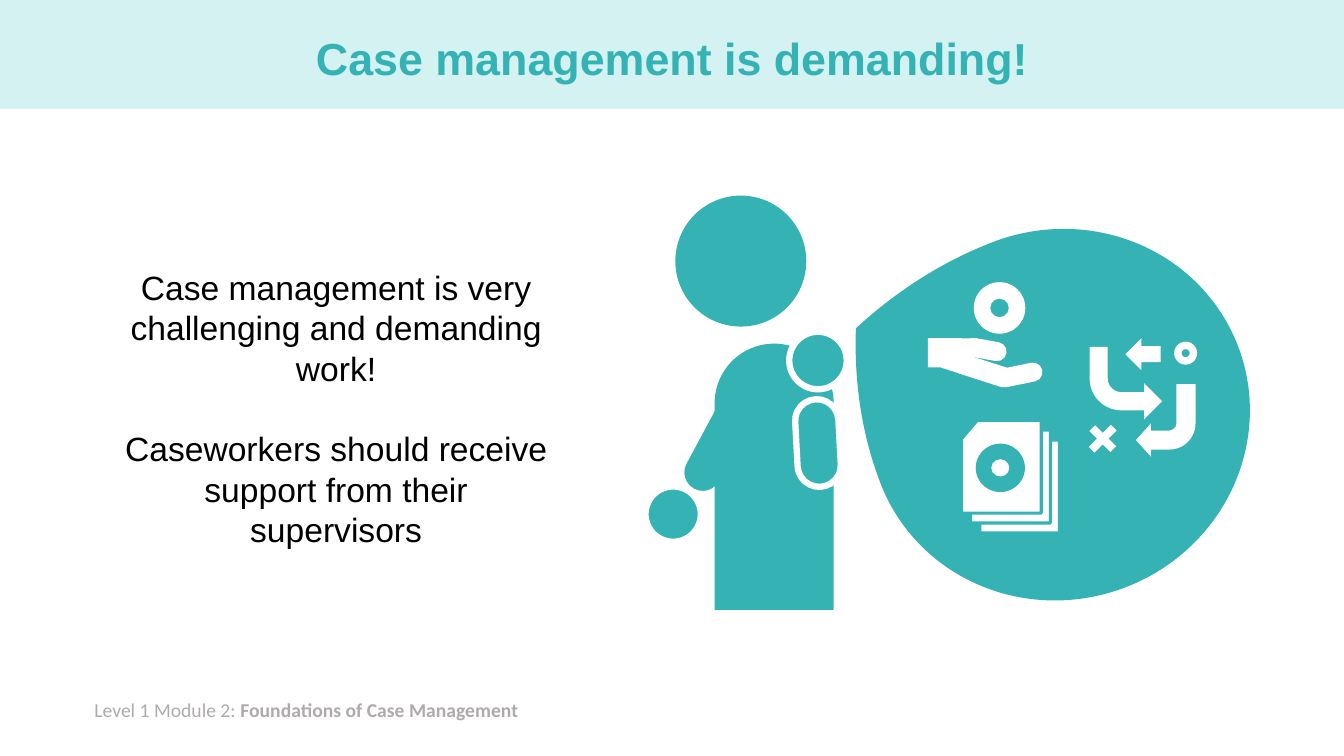
from pptx import Presentation
from pptx.dml.color import RGBColor
from pptx.enum.shapes import MSO_SHAPE as S
from pptx.enum.text import MSO_ANCHOR as Anchor, PP_ALIGN as Align
from pptx.util import Cm, Pt

COLORS = {
    "teal": "35B2B4",
    "pale": "D4F2F2",
    "white": "FFFFFF",
    "black": "000000",
    "gray": "AFABAB",
}


def rgb(name):
    return RGBColor.from_string(COLORS[name])


def write(paragraph, text, size=24, font="Arial", color="black", bold=False):
    run = paragraph.add_run()
    run.text = text
    run.font.size = Pt(size)
    run.font.name = font
    run.font.bold = bold
    run.font.color.rgb = rgb(color)


class CaseSlide:
    """Draws styled text and icon pieces on one slide, measured in centimetres."""

    def __init__(self, slide):
        self.shapes = slide.shapes

    def add_text(self, box, paragraphs, align=Align.LEFT, anchor=Anchor.TOP,
                 spacing=None, gap=0, **style):
        frame = self.shapes.add_textbox(*map(Cm, box)).text_frame
        frame.word_wrap = True
        frame.vertical_anchor = anchor
        for index, runs in enumerate(paragraphs):
            paragraph = frame.add_paragraph() if index else frame.paragraphs[0]
            paragraph.alignment = align
            paragraph.line_spacing = spacing
            paragraph.space_before = Pt(gap if index else 0)
            for words, extra in runs:
                write(paragraph, words, **{**style, **extra})

    def add_piece(self, kind, box, fill="teal", line=None, width=1, turn=0, flip="",
                  adjust=()):
        piece = self.shapes.add_shape(kind, *map(Cm, box))
        piece.shadow.inherit = False
        piece.fill.solid()
        piece.fill.fore_color.rgb = rgb(fill)
        if line:
            piece.line.color.rgb = rgb(line)
            piece.line.width = Pt(width)
        else:
            piece.line.fill.background()
        piece.rotation = turn
        for axis in flip:
            piece.element.spPr.xfrm.set("flip" + axis, "1")
        for index, value in enumerate(adjust):
            piece.adjustments[index] = value

    def caseworker(self):
        outline = {"line": "white", "width": 4.5}
        self.add_piece(S.OVAL, (17.02, 4.93, 3.3, 3.3))
        self.add_piece(S.TEAR, (21.87, 5.79, 9.65, 9.32), turn=339, flip="H", adjust=(0.83,))
        self.add_piece(S.OVAL, (16.33, 12.32, 1.27, 1.27), line="white", turn=317.9)
        self.add_piece(S.ROUND_2_SAME_RECTANGLE, (17.55, 10.13, 0.97, 2.34),
                       line="white", turn=208.2, adjust=(0.5, 0))
        self.add_piece(S.ROUND_2_SAME_RECTANGLE, (18.01, 8.66, 3, 6.71), adjust=(0.5, 0))
        self.add_piece(S.OVAL, (19.89, 8.36, 1.45, 1.45), **outline)
        self.add_piece(S.ROUND_2_SAME_RECTANGLE, (20.07, 10.06, 1.09, 2.21),
                       turn=356.9, adjust=(0.5, 0.5), **outline)

    def giving_hand(self):
        fingers = [
            ((24.51, 8.56, 0.51, 1.55), 107.9),
            ((25.43, 8.84, 0.48, 1.22), 78.5),
            ((24.59, 8.26, 0.48, 1.09), 100.2),
        ]
        for box, turn in fingers:
            self.add_piece(S.ROUNDED_RECTANGLE, box, "white", turn=turn, flip="H",
                           adjust=(0.5,))
        self.add_piece(S.FLOWCHART_MANUAL_INPUT, (23.85, 8.41, 0.61, 0.97), "white", turn=17.9)
        self.add_piece(S.RECTANGLE, (23.44, 8.46, 0.74, 0.86), "white", turn=90)
        self.add_piece(S.DONUT, (24.54, 7.11, 1.3, 1.3), "white", adjust=(0.32,))

    def strategy(self):
        self.add_piece(S.DOWN_ARROW, (28.4, 8.48, 0.81, 0.89), "white", turn=90)
        self.add_piece(S.BENT_ARROW, (27.46, 8.74, 1.83, 1.83), "white", flip="V")
        self.add_piece(S.BENT_ARROW, (28.63, 9.68, 1.5, 1.83), "white", flip="HV",
                       adjust=(0.32, 0.28, 0.25, 0.44))
        self.add_piece(S.MATH_PLUS, (27.28, 10.52, 1.02, 1.07), "white", turn=45,
                       adjust=(0.2,))
        self.add_piece(S.DONUT, (29.59, 8.61, 0.58, 0.58), "white", adjust=(0.32,))

    def case_files(self):
        for depth in (2, 1, 0):
            self.add_piece(S.FLOWCHART_CARD,
                           (24.23 + 0.23 * depth, 10.59 + 0.25 * depth, 2.01, 2.34),
                           "white", line="teal", width=2.25)
        self.add_piece(S.DONUT, (24.59, 11.18, 1.24, 1.22), adjust=(0.32,))


def main():
    deck = Presentation()
    deck.slide_width, deck.slide_height = Cm(33.87), Cm(19.05)
    page = CaseSlide(deck.slides.add_slide(deck.slide_layouts[6]))

    page.add_piece(S.RECTANGLE, (0, 0, 33.87, 2.74), "pale")
    page.add_text((2.13, 17.45, 11.56, 0.86),
                  [[("Level 1 Module 2: ", {}),
                    ("Foundations of Case Management", {"bold": True})]],
                  size=14, font="Calibri", color="gray")
    page.add_text((2.34, 0.33, 29.21, 2.41), [[("Case management is demanding!", {})]],
                  align=Align.CENTER, anchor=Anchor.MIDDLE, spacing=0.9,
                  size=32, color="teal", bold=True)
    page.add_text((2.77, 6.6, 11.4, 7.44),
                  [[("Case management is very challenging and demanding work!", {})],
                   [("Caseworkers should receive support from their supervisors", {})]],
                  align=Align.CENTER, spacing=Pt(28.8), gap=28.8)
    page.caseworker()
    page.giving_hand()
    page.strategy()
    page.case_files()
    deck.save("out.pptx")


if __name__ == "__main__":
    main()
